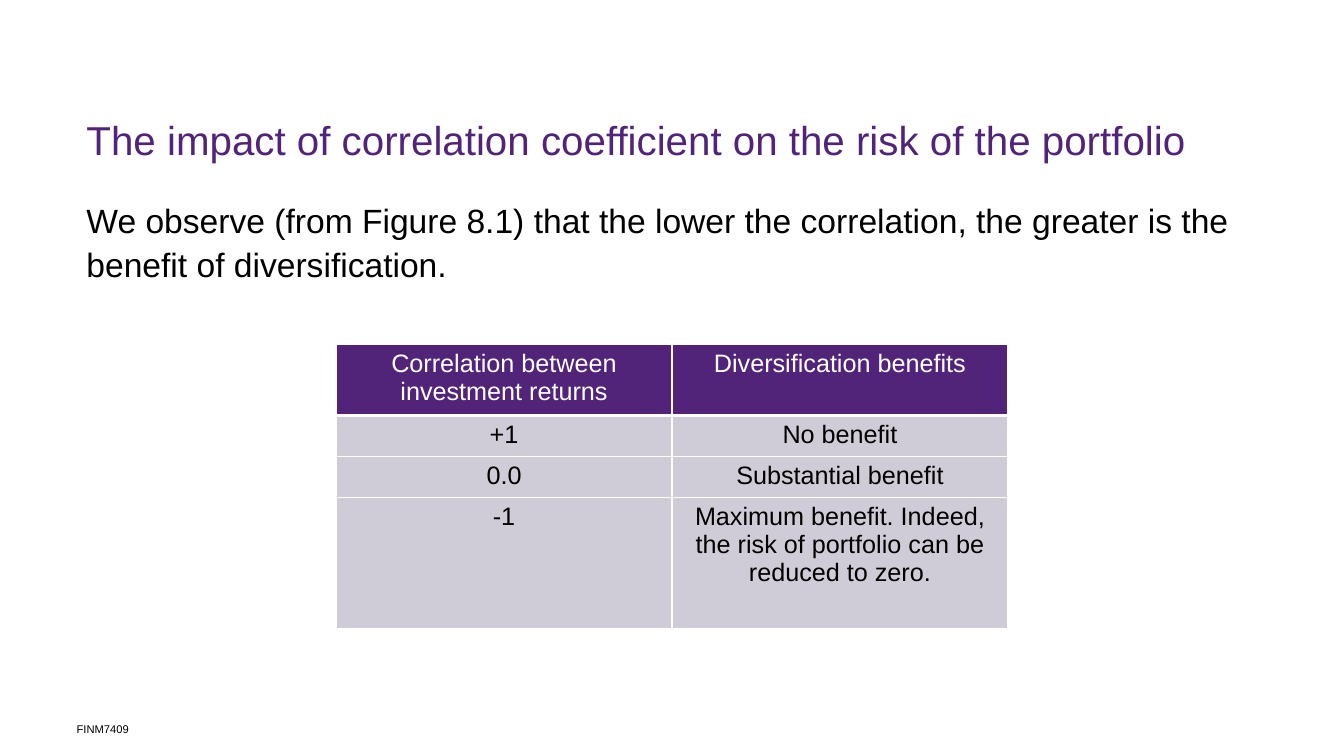
from lxml import etree
from pptx import Presentation
from pptx.dml.color import RGBColor
from pptx.enum.text import MSO_ANCHOR, PP_ALIGN
from pptx.oxml.ns import qn
from pptx.util import Cm, Pt

CENTER = PP_ALIGN.CENTER
TOP = MSO_ANCHOR.TOP
MIDDLE = MSO_ANCHOR.MIDDLE

PURPLE = RGBColor(0x51, 0x24, 0x7A)
LAVENDER = RGBColor(0xD0, 0xCC, 0xD7)
WHITE = RGBColor(0xFF, 0xFF, 0xFF)
BLACK = RGBColor(0x00, 0x00, 0x00)

BENEFITS = [
    ("Correlation between investment returns", "Diversification benefits"),
    ("+1", "No benefit"),
    ("0.0", "Substantial benefit"),
    ("-1", "Maximum benefit. Indeed, the risk of portfolio can be reduced to zero."),
]


class SlideBuilder:
    font = "Arial"

    def __init__(self, slide):
        self.slide = slide

    def style(self, paragraph, size, color):
        for run in paragraph.runs:
            run.font.name = self.font
            run.font.size = Pt(size)
            run.font.color.rgb = color

    def text(self, words, box, size, color, spacing=1.0, anchor=TOP, inset=(0.25, 0.13)):
        frame = self.slide.shapes.add_textbox(*map(Cm, box)).text_frame
        frame.word_wrap = True
        frame.vertical_anchor = anchor
        frame.margin_left = frame.margin_right = Cm(inset[0])
        frame.margin_top = frame.margin_bottom = Cm(inset[1])
        frame.text = words
        paragraph = frame.paragraphs[0]
        paragraph.line_spacing = spacing
        self.style(paragraph, size, color)

    def borders(self, cell, widths):
        properties = cell._tc.get_or_add_tcPr()
        for position, (side, width) in enumerate(widths.items()):
            line = etree.Element(qn(f"a:ln{side}"), w=str(Pt(width)))
            fill = etree.SubElement(line, qn("a:solidFill"))
            etree.SubElement(fill, qn("a:srgbClr"), val=str(WHITE))
            properties.insert(position, line)

    def table(self, rows, box, heights, size):
        table = self.slide.shapes.add_table(len(rows), len(rows[0]), *map(Cm, box)).table
        for row, height in zip(table.rows, heights):
            row.height = Cm(height)
        for r, row in enumerate(rows):
            for c, words in enumerate(row):
                cell = table.cell(r, c)
                cell.text = words
                paragraph = cell.text_frame.paragraphs[0]
                paragraph.alignment = CENTER
                self.style(paragraph, size, WHITE if r == 0 else BLACK)
                cell.fill.solid()
                cell.fill.fore_color.rgb = PURPLE if r == 0 else LAVENDER
                self.borders(cell, {"L": 1, "R": 1, "T": 3 if r == 1 else 1, "B": 3 if r == 0 else 1})


def main():
    deck = Presentation()
    deck.slide_width = Cm(33.87)
    deck.slide_height = Cm(19.05)
    page = SlideBuilder(deck.slides.add_slide(deck.slide_layouts[6]))

    page.text("The impact of correlation coefficient on the risk of the portfolio",
              (1.93, 2.92, 30, 1.3), 28.8, PURPLE, spacing=0.9)
    page.text("We observe (from Figure 8.1) that the lower the correlation, "
              "the greater is the benefit of diversification.",
              (1.93, 4.8, 30, 12.73), 24, BLACK, spacing=1.1)
    page.table(BENEFITS, (8.47, 8.69, 16.93, 7.14), (1.78, 1.03, 1.03, 3.3), 18)
    page.text("FINM7409", (1.93, 18.03, 5, 0.66), 8, BLACK, anchor=MIDDLE, inset=(0, 0))

    deck.save("out.pptx")


if __name__ == "__main__":
    main()
